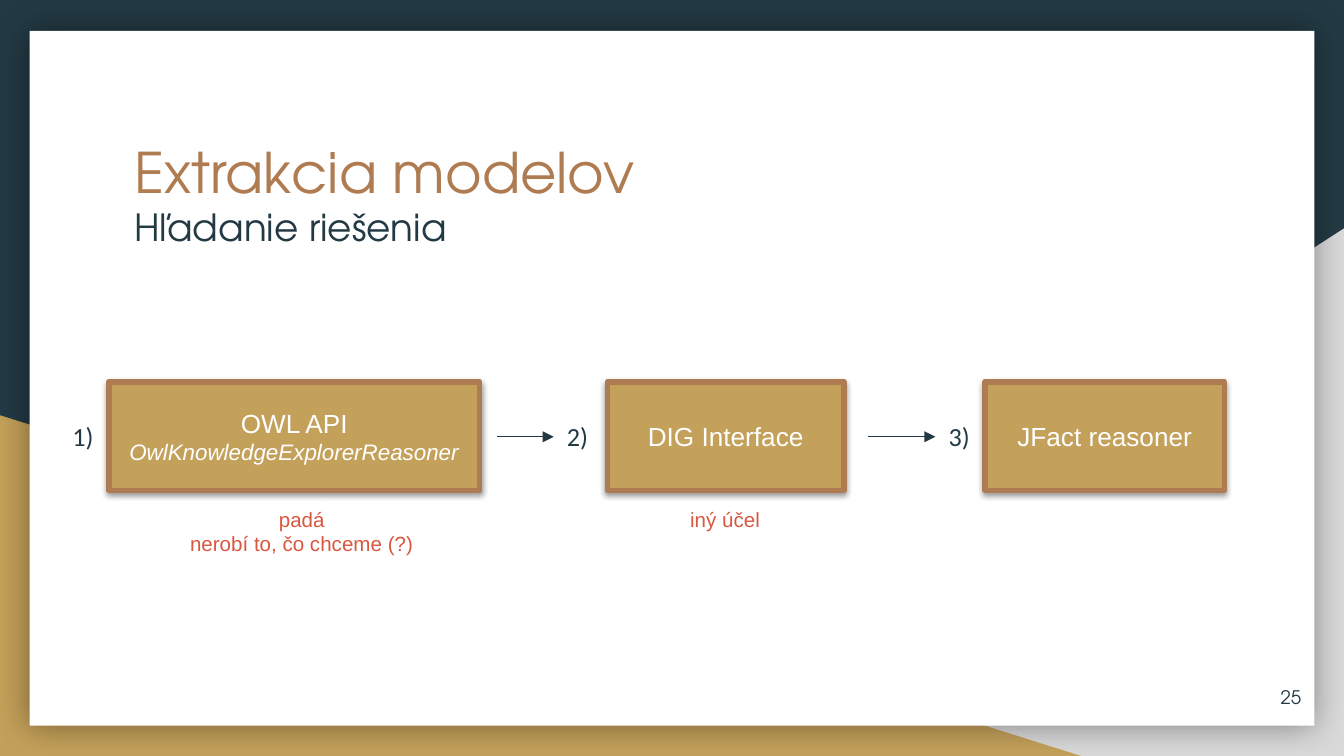
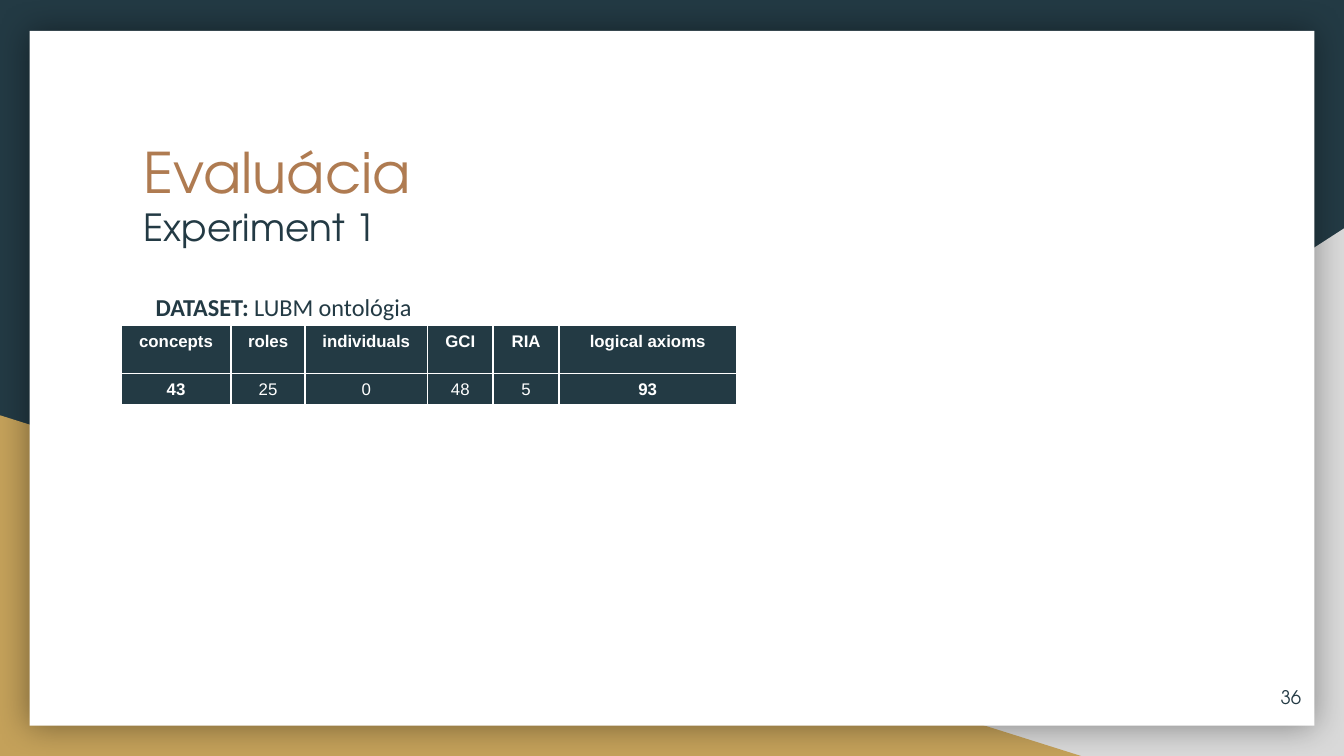
from pptx import Presentation
from pptx.dml.color import RGBColor
from pptx.enum.shapes import MSO_CONNECTOR, MSO_SHAPE
from pptx.enum.text import MSO_ANCHOR as ANCHOR, MSO_AUTO_SIZE as AUTO, PP_ALIGN as ALIGN
from pptx.oxml.ns import qn
from pptx.util import Inches, Pt
from lxml.etree import SubElement

NAVY = RGBColor(0x23, 0x3A, 0x44)
GOLD = RGBColor(0xC4, 0xA1, 0x5A)
BROWN = RGBColor(0xAF, 0x7B, 0x51)
GREY = RGBColor(0xD9, 0xD9, 0xD9)
RED = RGBColor(0xD9, 0x56, 0x3F)
WHITE = RGBColor(0xFF, 0xFF, 0xFF)

HEAD_FONT = "TeX Gyre Adventor"
BODY_FONT = "Calibri"
BOX_FONT = "Arial"


def set_font(font, name, size, color, bold=None, italic=None):
    font.name = name
    font.size = Pt(size)
    font.color.rgb = color
    font.bold = bold
    font.italic = italic


def set_inset(tf, inset):
    tf.margin_left = tf.margin_right = Inches(inset)
    tf.margin_top = tf.margin_bottom = Inches(inset)


def add_shadow(sp, alpha, blur, dist, angle):
    effects = sp._element.spPr.find(qn("a:effectLst"))
    shadow = SubElement(effects, qn("a:outerShdw"), blurRad=str(Pt(blur)), dist=str(Pt(dist)),
                        dir=str(angle * 60000), algn="ctr", rotWithShape="0")
    color = SubElement(shadow, qn("a:srgbClr"), val="000000")
    SubElement(color, qn("a:alpha"), val=str(alpha * 1000))


def add_block(s, kind, at, fill):
    sp = s.shapes.add_shape(kind, *map(Inches, at))
    sp.shadow.inherit = False
    sp.fill.solid()
    sp.fill.fore_color.rgb = fill
    sp.line.fill.background()
    return sp


def add_text(s, at, lines, name, size, color, align=ALIGN.LEFT, wrap=True):
    tf = s.shapes.add_textbox(*map(Inches, at)).text_frame
    tf.word_wrap = wrap
    for i, line in enumerate(lines):
        p = tf.paragraphs[0] if i == 0 else tf.add_paragraph()
        p.text = line
        p.alignment = align
        set_font(p.font, name, size, color)
    return tf


def add_title(s, left, heading, subheading):
    title = s.shapes.title
    s.shapes._spTree.append(title._element)
    title.left, title.top, title.width, title.height = map(Inches, (left, 0.92, 8.21, 1.08))
    tf = title.text_frame
    tf.word_wrap = True
    tf.auto_size = AUTO.NONE
    tf.vertical_anchor = ANCHOR.TOP
    set_inset(tf, 0.1)
    p = tf.paragraphs[0]
    p.alignment = ALIGN.LEFT
    r = p.add_run()
    r.text = heading
    set_font(r.font, HEAD_FONT, 30, BROWN)
    p.add_line_break()
    r = p.add_run()
    r.text = subheading
    set_font(r.font, HEAD_FONT, 20, NAVY)


def add_slide(prs, number, left, heading, subheading):
    s = prs.slides.add_slide(prs.slide_layouts[5])
    s.background.fill.solid()
    s.background.fill.fore_color.rgb = NAVY
    corner = add_block(s, MSO_SHAPE.RIGHT_TRIANGLE, (3.92, 1.7, 6.08, 3.93), GREY)
    corner._element.spPr.xfrm.set("flipH", "1")
    add_block(s, MSO_SHAPE.RIGHT_TRIANGLE, (0, 3.09, 8.06, 2.54), GOLD)
    page = add_block(s, MSO_SHAPE.RECTANGLE, (0.22, 0.23, 9.56, 5.17), WHITE)
    add_shadow(page, 40, 18, 0, 0)
    add_title(s, left, heading, subheading)
    tf = add_text(s, (9.18, 4.97, 0.6, 0.43), [number], HEAD_FONT, 10, NAVY, ALIGN.RIGHT)
    tf.vertical_anchor = ANCHOR.MIDDLE
    set_inset(tf, 0.1)
    return s


def add_step(s, label, label_left, left, width, name, detail=None):
    sp = add_block(s, MSO_SHAPE.RECTANGLE, (left, 2.84, width, 0.81), GOLD)
    sp.line.color.rgb = BROWN
    sp.line.width = Pt(3)
    add_shadow(sp, 38, 3.1, 1.6, 90)
    tf = sp.text_frame
    tf.vertical_anchor = ANCHOR.MIDDLE
    p = tf.paragraphs[0]
    p.text = name
    p.alignment = ALIGN.CENTER
    set_font(p.font, BOX_FONT, 14, WHITE)
    if detail:
        p = tf.add_paragraph()
        p.text = detail
        p.alignment = ALIGN.CENTER
        set_font(p.font, BOX_FONT, 12, WHITE, italic=True)
    add_text(s, (label_left, 3.08, 0.36, 0.34), [label], BODY_FONT, 14, NAVY, wrap=False)


def add_arrow(s, start, end, y):
    line = s.shapes.add_connector(MSO_CONNECTOR.STRAIGHT, Inches(start), Inches(y),
                                  Inches(end), Inches(y))
    line.line.color.rgb = NAVY
    line.line.width = Pt(0.75)
    SubElement(line.line._get_or_add_ln(), qn("a:tailEnd"), type="triangle")
    SubElement(line._element.spPr, qn("a:effectLst"))


def add_borders(cell):
    tcPr = cell._tc.get_or_add_tcPr()
    for side in ("lnL", "lnR", "lnT", "lnB"):
        ln = SubElement(tcPr, qn(f"a:{side}"), w=str(Pt(1)))
        fill = SubElement(ln, qn("a:solidFill"))
        SubElement(fill, qn("a:srgbClr"), val=str(WHITE))


def add_table(s, left, top, widths, heights, rows, bold_cells):
    frame = s.shapes.add_table(len(rows), len(widths), Inches(left), Inches(top),
                               Inches(sum(widths)), Inches(sum(heights)))
    table = frame.table
    for column, width in zip(table.columns, widths):
        column.width = Inches(width)
    for i, (row, height) in enumerate(zip(rows, heights)):
        table.rows[i].height = Inches(height)
        for j, text in enumerate(row):
            cell = table.cell(i, j)
            add_borders(cell)
            cell.fill.solid()
            cell.fill.fore_color.rgb = NAVY
            cell.margin_top = Inches(0.05)
            cell.margin_bottom = Inches(0.03)
            p = cell.text_frame.paragraphs[0]
            p.text = text
            p.alignment = ALIGN.CENTER
            set_font(p.font, BOX_FONT, 9, WHITE, bold=i == 0 or text in bold_cells)


def build_extraction(prs):
    s = add_slide(prs, "25", 0.9, "Extrakcia modelov", "Hľadanie riešenia")
    add_step(s, "1)", 0.44, 0.81, 2.76, "OWL API", "OwlKnowledgeExplorerReasoner")
    add_step(s, "2)", 4.12, 4.52, 1.76, "DIG Interface")
    add_step(s, "3)", 6.96, 7.33, 1.78, "JFact reasoner")
    add_arrow(s, 3.7, 4.12, 3.25)
    add_arrow(s, 6.46, 6.96, 3.25)
    add_text(s, (0.9, 3.72, 2.69, 0.47), ["padá", "nerobí to, čo chceme (?)"],
             BOX_FONT, 11, RED, ALIGN.CENTER)
    add_text(s, (4.05, 3.72, 2.69, 0.29), ["iný účel"], BOX_FONT, 11, RED, ALIGN.CENTER)


def build_evaluation(prs):
    s = add_slide(prs, "36", 0.97, "Evaluácia", "Experiment 1")
    tf = add_text(s, (0.9, 2.04, 5.29, 3.14), ["DATASET: "], BODY_FONT, 13, NAVY)
    set_inset(tf, 0.1)
    p = tf.paragraphs[0]
    p.line_spacing = 1.15
    p._p.get_or_add_pPr().set("marL", str(Inches(0.16)))
    p.runs[0].font.bold = True
    p.add_run().text = "LUBM ontológia"
    rows = [
        ["concepts", "roles", "individuals", "GCI", "RIA", "logical axioms"],
        ["43", "25", "0", "48", "5", "93"],
    ]
    add_table(s, 0.9, 2.42, [0.82, 0.55, 0.91, 0.49, 0.49, 1.32], [0.36, 0.23], rows,
              ("43", "93"))


def main():
    prs = Presentation()
    prs.slide_width = Inches(10)
    prs.slide_height = Inches(10 * 9 / 16)
    build_extraction(prs)
    build_evaluation(prs)
    prs.save("out.pptx")


if __name__ == "__main__":
    main()
